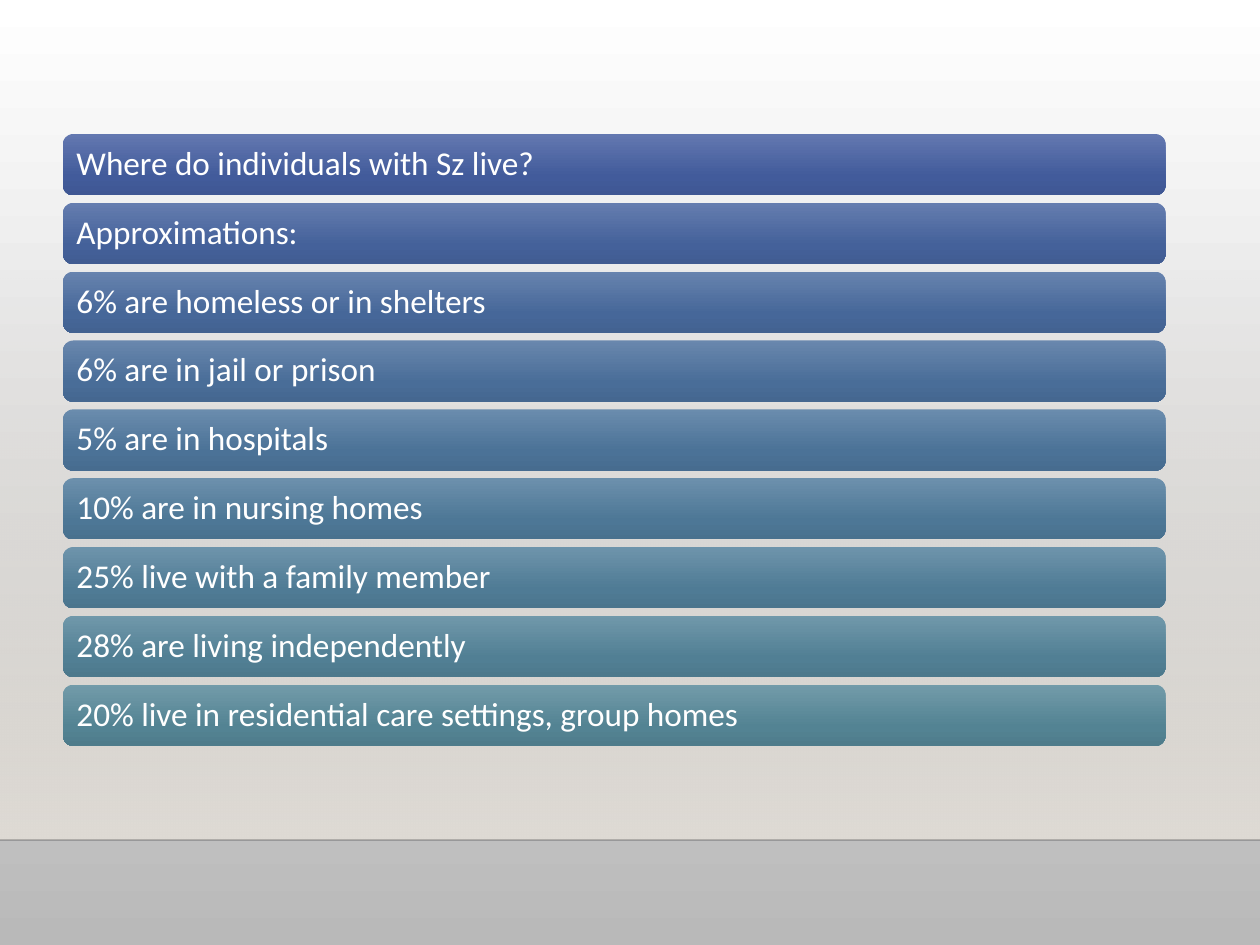
from lxml.etree import SubElement
from pptx import Presentation
from pptx.dml.color import RGBColor
from pptx.enum.shapes import MSO_CONNECTOR as Connector, MSO_SHAPE as Shape
from pptx.enum.text import MSO_ANCHOR as Anchor, PP_ALIGN as Align
from pptx.oxml.ns import qn
from pptx.util import Pt

WIDTH, HEIGHT = 720, 540
FLOOR_TOP = 480
ROW_GAP = 4.3
# Each row: text, then gradient colours at the top, at 69% and at the bottom
ROWS = [
    ("Where do individuals with Sz live?", "6378B0", "425B9B", "3F5793"),
    ("Approximations:", "657DAF", "44619A", "415C92"),
    ("6% are homeless or in shelters", "6783AE", "466799", "436291"),
    ("6% are in jail or prison", "6987AD", "496D98", "456790"),
    ("5% are in hospitals", "6A8CAD", "4B7297", "476C8F"),
    ("10% are in nursing homes", "6C90AC", "4D7796", "49718E"),
    ("25% live with a family member", "6E94AB", "4F7B95", "4B758D"),
    ("28% are living independently", "7098AA", "517F94", "4D798C"),
    ("20% live in residential care settings, group homes", "729BA9", "538393", "4F7C8B"),
]
FRAME_FORMAT = {
    "word_wrap": True, "vertical_anchor": Anchor.MIDDLE,
    "margin_left": Pt(6), "margin_right": Pt(6),
    "margin_top": Pt(6), "margin_bottom": Pt(6),
}
PARA_FORMAT = {"alignment": Align.LEFT, "line_spacing": 0.9}
FONT_FORMAT = {"name": "Calibri", "size": Pt(19)}


def color(value):
    return RGBColor.from_string(value)


def apply(target, values):
    for name, value in values.items():
        setattr(target, name, value)


def set_alpha(color_element, percent):
    SubElement(color_element, qn("a:alpha"), val=str(percent * 1000))


def paint_down(owner, fill, stops):
    """Fill from top to bottom with (position, colour, opacity) stops."""
    fill.gradient()
    fill.gradient_angle = 270
    stop_list = next(owner.element.iter(qn("a:gsLst")))
    for old in list(stop_list):
        stop_list.remove(old)
    for position, value, opacity in stops:
        stop = SubElement(stop_list, qn("a:gs"), pos=str(position * 1000))
        tone = SubElement(stop, qn("a:srgbClr"), val=value)
        if opacity < 100:
            set_alpha(tone, opacity)


def add_panel(page, kind, box, stops):
    panel = page.shapes.add_shape(kind, *map(Pt, box))
    panel.shadow.inherit = False
    panel.line.fill.background()
    paint_down(panel, panel.fill, stops)
    return panel


def add_backdrop(page, box):
    left, top, width, height = box
    paint_down(page, page.background.fill, [(0, "FFFFFF", 100), (100, "B9B9B9", 100)])
    # Warm wall that fades in down to the floor line
    add_panel(page, Shape.RECTANGLE, box, [(0, "DFDBD5", 0), (100, "DFDBD5", 100)])
    # Floor line
    bottom = top + height
    edge = page.shapes.add_connector(
        Connector.STRAIGHT, Pt(left), Pt(bottom), Pt(left + width), Pt(bottom))
    edge.line.width = Pt(1)
    edge.line.color.rgb = color("000001")
    set_alpha(next(edge.element.spPr.iter(qn("a:srgbClr"))), 20)
    SubElement(edge.element.spPr, qn("a:effectLst"))


def add_rows(page, box):
    left, top, width, height = box
    pitch = (height + ROW_GAP) / len(ROWS)
    for index, (text, *tones) in enumerate(ROWS):
        row_box = (left, top + index * pitch, width, pitch - ROW_GAP)
        stops = [(position, tone, 100) for position, tone in zip((0, 69, 100), tones)]
        row = add_panel(page, Shape.ROUNDED_RECTANGLE, row_box, stops)
        apply(row.text_frame, FRAME_FORMAT)
        para = row.text_frame.paragraphs[0]
        apply(para, PARA_FORMAT)
        span = para.add_run()
        span.text = text
        apply(span.font, FONT_FORMAT)
        span.font.color.rgb = color("FFFFFF")


def main():
    deck = Presentation()
    deck.slide_width, deck.slide_height = Pt(WIDTH), Pt(HEIGHT)
    page = deck.slides.add_slide(deck.slide_layouts[6])
    add_backdrop(page, (0, 158.4, WIDTH, FLOOR_TOP - 158.4))
    add_rows(page, (36, 76.6, 630, 349.7))
    deck.save("out.pptx")


if __name__ == "__main__":
    main()
